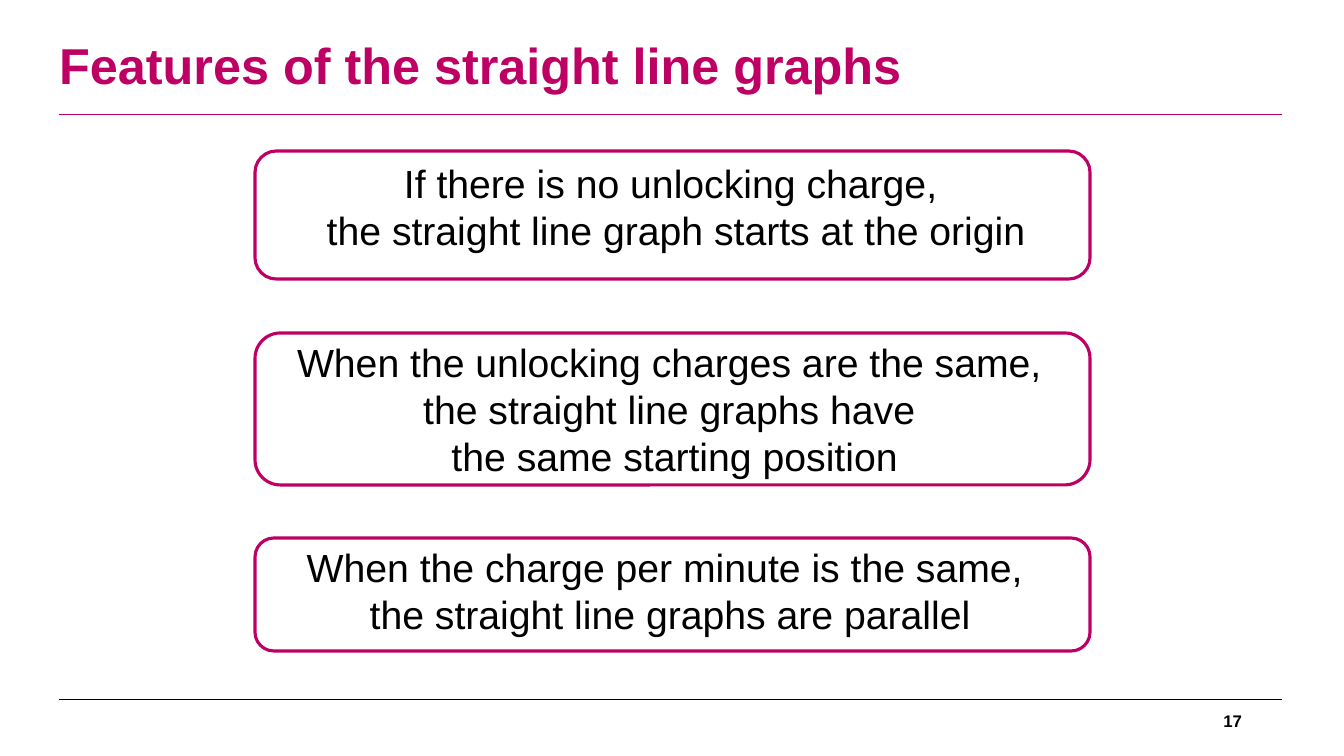
from pptx import Presentation
from pptx.dml.color import RGBColor
from pptx.enum.shapes import MSO_CONNECTOR as CONN, MSO_SHAPE as SHAPE
from pptx.enum.text import MSO_ANCHOR as ANCHOR, MSO_AUTO_SIZE as AUTO, PP_ALIGN as ALIGN
from pptx.oxml.ns import qn
from pptx.util import Emu, Pt

MAGENTA = RGBColor(0xBE, 0x00, 0x64)
BLACK = RGBColor(0x00, 0x00, 0x00)
FONT = "Arial"
PX_PER_INCH = 100.8

CARDS = [
    ((255, 151, 835, 128), (312, 154, 728, 105),
     ["If there is no unlocking charge, ",
      "the straight line graph starts at the origin"]),
    ((255, 333, 835, 152), (282, 333, 785, 152),
     ["When the unlocking charges are the same, ",
      "the straight line graphs have ",
      "the same starting position"]),
    ((255, 538, 835, 113), (292, 538, 756, 105),
     ["When the charge per minute is the same, ",
      "the straight line graphs are parallel"]),
]


def px(n):
    return Emu(round(n * 914400 / PX_PER_INCH))


def add_run(p, text, size, color, bold=False):
    r = p.add_run()
    r.text = text
    r.font.name = FONT
    r.font.size = Pt(size)
    r.font.bold = bold
    r.font.color.rgb = color


def add_rule(slide, x, y, w, color):
    line = slide.shapes.add_connector(CONN.STRAIGHT, px(x), px(y), px(x + w), px(y))
    line.line.color.rgb = color
    line.line.width = Pt(0.75)
    sp_pr = line._element.spPr
    sp_pr.append(sp_pr.makeelement(qn("a:effectLst"), {}))


def add_title(slide, box, text):
    title = slide.shapes.title
    title.left, title.top, title.width, title.height = map(px, box)
    tf = title.text_frame
    tf.word_wrap = True
    tf.auto_size = AUTO.NONE
    tf.vertical_anchor = ANCHOR.MIDDLE
    p = tf.paragraphs[0]
    p.alignment = ALIGN.LEFT
    p.line_spacing = 0.9
    add_run(p, text, 36, MAGENTA, bold=True)


def add_card(slide, frame, text_box, lines):
    tf = slide.shapes.add_textbox(*map(px, text_box)).text_frame
    tf.word_wrap = False
    tf.auto_size = AUTO.SHAPE_TO_FIT_TEXT
    p = tf.paragraphs[0]
    p.alignment = ALIGN.CENTER
    for i, text in enumerate(lines):
        if i:
            p.add_line_break()
        add_run(p, text, 28, BLACK)

    sp = slide.shapes.add_shape(SHAPE.ROUNDED_RECTANGLE, *map(px, frame))
    sp.shadow.inherit = False
    sp.fill.background()
    sp.line.color.rgb = MAGENTA
    sp.line.width = Pt(2.25)


def add_page_number(slide, box, number):
    tf = slide.shapes.add_textbox(*map(px, box)).text_frame
    tf.word_wrap = True
    tf.vertical_anchor = ANCHOR.MIDDLE
    p = tf.paragraphs[0]
    p.alignment = ALIGN.RIGHT
    add_run(p, number, 12, BLACK, bold=True)


def main():
    prs = Presentation()
    prs.slide_width, prs.slide_height = px(1344), px(756)
    slide = prs.slides.add_slide(prs.slide_layouts[5])
    add_rule(slide, 59, 700, 1223, BLACK)
    add_rule(slide, 59, 115, 1223, MAGENTA)
    add_page_number(slide, (950, 701, 302, 40), "17")
    add_title(slide, (49, 12, 1008, 112), "Features of the straight line graphs")
    for frame, text_box, lines in CARDS:
        add_card(slide, frame, text_box, lines)
    prs.save("out.pptx")


if __name__ == "__main__":
    main()
